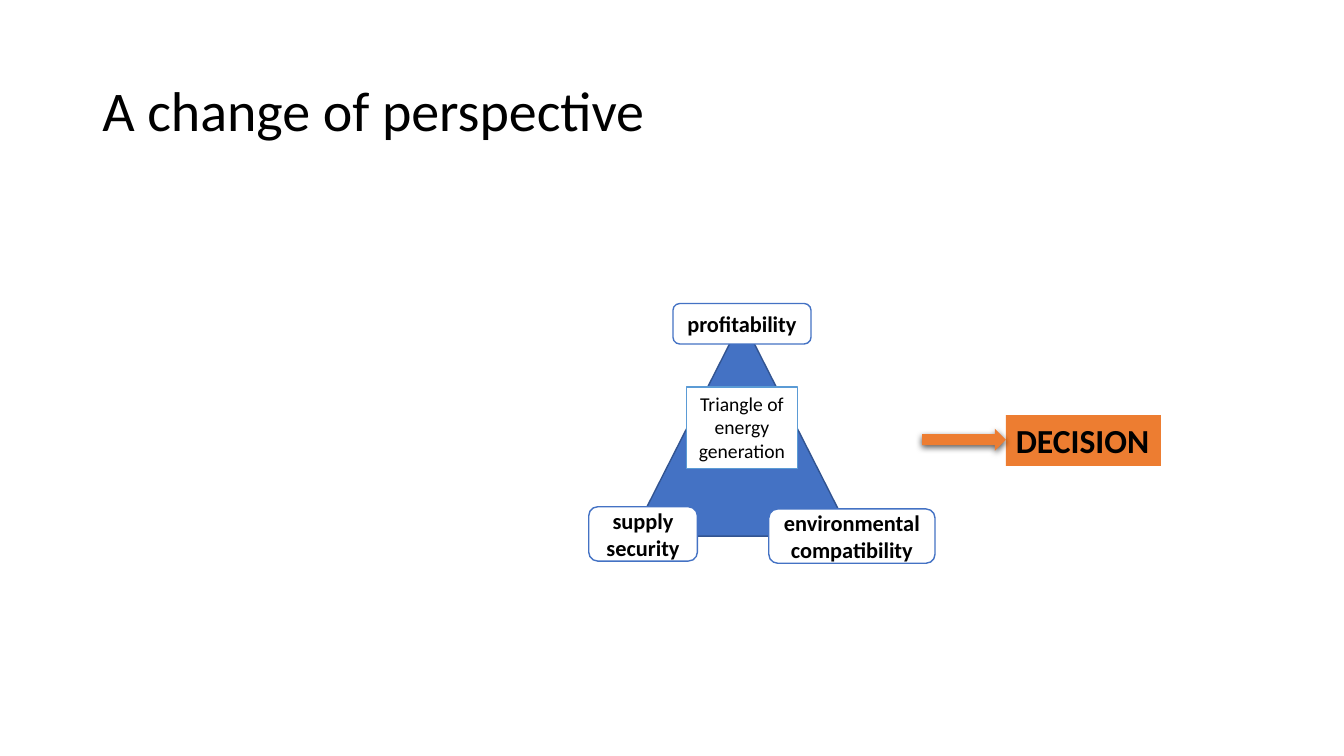
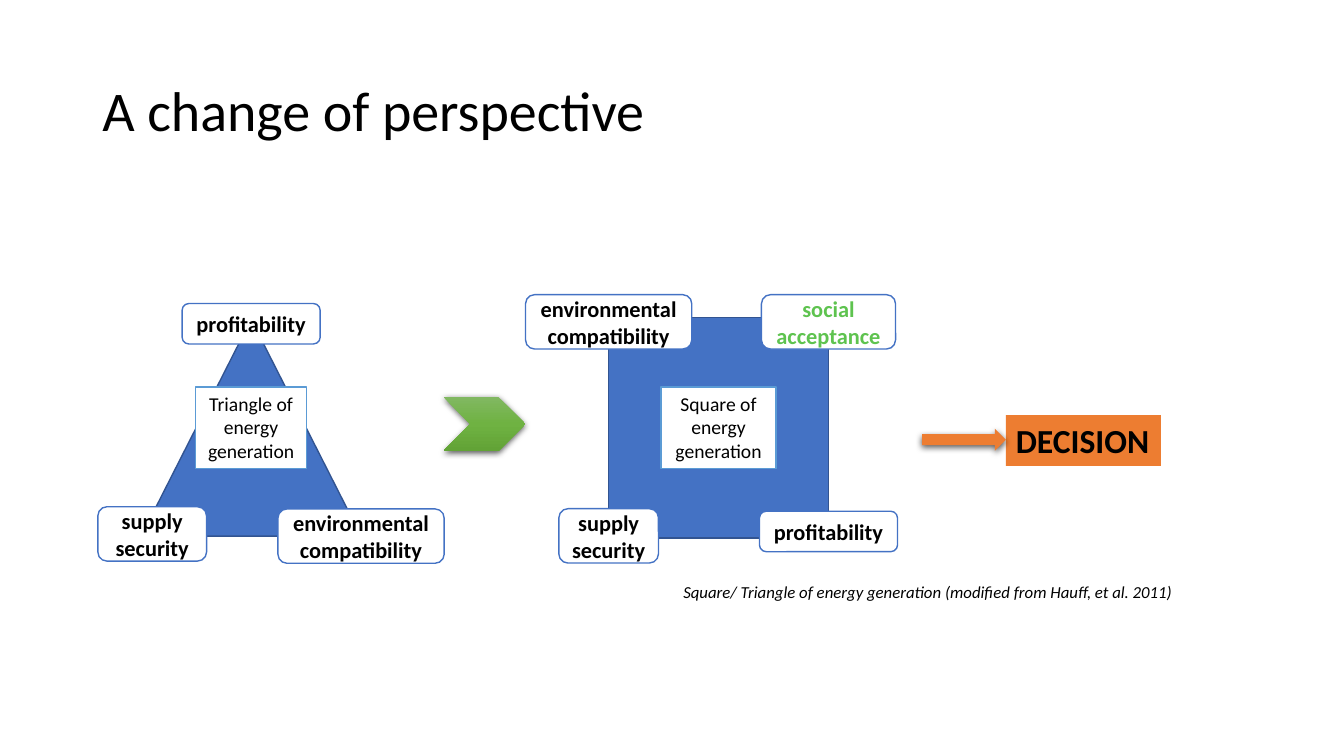
import copy

import pptx
import pptx.dml.color
import pptx.enum.shapes
import pptx.enum.text
import pptx.oxml
import pptx.oxml.ns
import pptx.util

Cm = pptx.util.Cm
Pt = pptx.util.Pt
RGBColor = pptx.dml.color.RGBColor
SHAPE = pptx.enum.shapes.MSO_SHAPE
ALIGN = pptx.enum.text.PP_ALIGN
ANCHOR = pptx.enum.text.MSO_ANCHOR
AUTO_SIZE = pptx.enum.text.MSO_AUTO_SIZE

BLACK = RGBColor(0x00, 0x00, 0x00)
WHITE = RGBColor(0xFF, 0xFF, 0xFF)
BLUE = RGBColor(0x44, 0x72, 0xC4)
DARK_BLUE = RGBColor(0x32, 0x54, 0x91)
LIGHT_BLUE = RGBColor(0x5B, 0x9B, 0xD5)
ORANGE = RGBColor(0xED, 0x7D, 0x31)
GREEN = RGBColor(0x5E, 0xC3, 0x4F)
CHEVRON_GREENS = [RGBColor(0x81, 0xB8, 0x61), RGBColor(0x6F, 0xB2, 0x42),
                  RGBColor(0x62, 0xA3, 0x36)]

TITLE_FONT = {"name": "Calibri", "size": Pt(40)}
CAPTION_FONT = {"name": "Calibri", "size": Pt(14)}
LABEL_FONT = {"name": "Calibri", "size": Pt(16), "bold": True}
DECISION_FONT = {"name": "Calibri", "size": Pt(24), "bold": True}
CITATION_FONT = {"name": "Calibri", "size": Pt(12), "italic": True}

TITLE = "A change of perspective"
DECISION = "DECISION"
CITATION = "Square/ Triangle of energy generation (modified from Hauff, et al. 2011)"

# Centres are fractions of the figure's width and height; sizes are in cm.
TRIANGLE = {
    "outline": SHAPE.ISOSCELES_TRIANGLE,
    "top": 8.05, "width": 5.54, "height": 5.46,
    "caption": ("Triangle of energy generation", (0.5, 0.5), (2.79, 2.06)),
    "labels": [
        (["profitability"], (0.5, 0.02), (3.48, 1.02), BLACK),
        (["supply", "security"], (0.05, 0.99), (2.74, 1.37), BLACK),
        (["environmental compatibility"], (1, 1), (4.19, 1.37), BLACK),
    ],
}
SQUARE = {
    "outline": SHAPE.RECTANGLE,
    "top": 8, "width": 5.54, "height": 5.56,
    "caption": ("Square of energy generation", (0.5, 0.5), (2.9, 2.06)),
    "labels": [
        (["profitability"], (1, 0.97), (3.48, 1.02), BLACK),
        (["supply", "security"], (0, 0.99), (2.51, 1.37), BLACK),
        (["environmental compatibility"], (0, 0.02), (4.19, 1.37), BLACK),
        (["social acceptance"], (1, 0.02), (3.38, 1.37), GREEN),
    ],
}


def add_box(shapes, outline, box, fill=None, line=None):
    shape = shapes.add_shape(outline, *map(Cm, box))
    shape.shadow.inherit = False
    if fill is not None:
        shape.fill.solid()
        shape.fill.fore_color.rgb = fill
    if line is None:
        shape.line.fill.background()
    else:
        shape.line.color.rgb = line
        shape.line.width = Pt(1)
    return shape


def write(shape, lines, font, color=BLACK, align=ALIGN.LEFT, spacing=None, **frame_format):
    """Fill a shape with one paragraph per line; frame_format goes to its text frame."""
    frame = shape.text_frame
    for name, value in ({"word_wrap": True} | frame_format).items():
        setattr(frame, name, value)
    frame.text = "\n".join(lines)
    for paragraph in frame.paragraphs:
        paragraph.alignment = align
        paragraph.line_spacing = spacing
        for name, value in font.items():
            setattr(paragraph.font, name, value)
        paragraph.font.color.rgb = color


def add_shadow(shape):
    effects = shape._element.spPr.find(pptx.oxml.ns.qn("a:effectLst"))
    effects.append(pptx.oxml.parse_xml(
        f'<a:outerShdw {pptx.oxml.ns.nsdecls("a")} blurRad="{Pt(4.5)}" dist="{Pt(1.5)}" '
        'dir="5400000" algn="ctr" rotWithShape="0"><a:srgbClr val="000000">'
        '<a:alpha val="63000"/></a:srgbClr></a:outerShdw>'))


def add_figure(slide, figure, left):
    """Draw an outline with a caption inside and labels at its corners."""
    shapes = slide.shapes.add_group_shape().shapes
    top, width, height = figure["top"], figure["width"], figure["height"]

    def centred(centre, size):
        return (left + centre[0] * width - size[0] / 2,
                top + centre[1] * height - size[1] / 2, *size)

    add_box(shapes, figure["outline"], (left, top, width, height), BLUE, DARK_BLUE)
    text, centre, size = figure["caption"]
    caption = add_box(shapes, SHAPE.RECTANGLE, centred(centre, size), WHITE, LIGHT_BLUE)
    write(caption, [text], CAPTION_FONT, align=ALIGN.CENTER,
          vertical_anchor=ANCHOR.TOP, auto_size=AUTO_SIZE.SHAPE_TO_FIT_TEXT)
    for lines, centre, size, color in figure["labels"]:
        label = add_box(shapes, SHAPE.ROUNDED_RECTANGLE, centred(centre, size), WHITE, BLUE)
        write(label, lines, LABEL_FONT, color, ALIGN.CENTER, vertical_anchor=ANCHOR.MIDDLE)


def add_decision(slide):
    shapes = slide.shapes.add_group_shape().shapes
    decision = add_box(shapes, SHAPE.RECTANGLE, (25.35, 10.46, 3.91, 1.28), ORANGE)
    write(decision, [DECISION], DECISION_FONT, word_wrap=False,
          vertical_anchor=ANCHOR.TOP, auto_size=AUTO_SIZE.SHAPE_TO_FIT_TEXT)
    add_shadow(add_box(shapes, SHAPE.RIGHT_ARROW, (23.24, 10.8, 2.11, 0.56), ORANGE))


def add_chevron(slide):
    chevron = add_box(slide.shapes, SHAPE.CHEVRON, (11.18, 10.01, 2.06, 1.35))
    chevron.fill.gradient()
    chevron.fill.gradient_angle = 270
    first_stop = next(chevron._element.spPr.iter(pptx.oxml.ns.qn("a:gs")))
    first_stop.addnext(copy.deepcopy(first_stop))
    for index, (stop, color) in enumerate(zip(chevron.fill.gradient_stops, CHEVRON_GREENS)):
        stop.position = index / 2
        stop.color.rgb = color
    add_shadow(chevron)


def add_slide(deck):
    """Add a slide with the shared title and decision."""
    slide = deck.slides.add_slide(deck.slide_layouts[6])
    title = slide.shapes.add_textbox(Cm(2.33), Cm(1.01), Cm(26.92), Cm(3.68))
    write(title, [TITLE], TITLE_FONT, spacing=0.9, vertical_anchor=ANCHOR.MIDDLE)
    add_decision(slide)
    return slide


def main():
    deck = pptx.Presentation()
    deck.slide_width, deck.slide_height = Cm(33.87), Cm(19.05)

    triangle_slide = add_slide(deck)
    add_figure(triangle_slide, TRIANGLE, 15.93)

    square_slide = add_slide(deck)
    add_figure(square_slide, TRIANGLE, 3.56)
    add_figure(square_slide, SQUARE, 15.34)
    add_chevron(square_slide)
    citation = square_slide.shapes.add_textbox(Cm(16.97), Cm(14.53), Cm(12.88), Cm(0.77))
    write(citation, [CITATION], CITATION_FONT, word_wrap=False,
          auto_size=AUTO_SIZE.SHAPE_TO_FIT_TEXT)

    deck.save("out.pptx")


if __name__ == "__main__":
    main()
